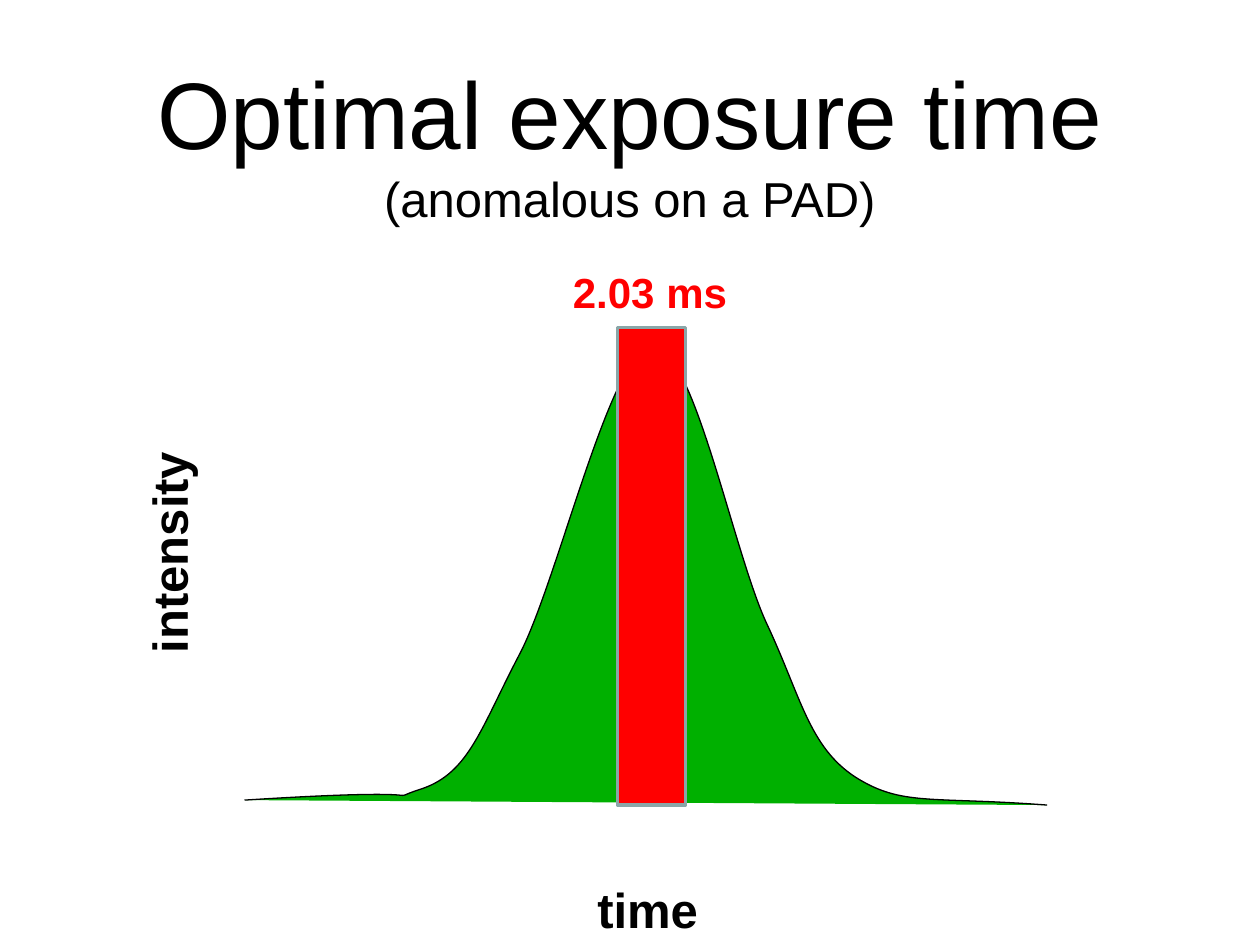
from dataclasses import dataclass

from lxml import etree
from pptx import Presentation
from pptx.dml.color import RGBColor
from pptx.enum.shapes import MSO_SHAPE
from pptx.enum.text import MSO_ANCHOR, MSO_AUTO_SIZE, PP_ALIGN
from pptx.oxml.ns import qn
from pptx.util import Cm, Pt

RECTANGLE = MSO_SHAPE.RECTANGLE
CENTER, LEFT = PP_ALIGN.CENTER, PP_ALIGN.LEFT
MIDDLE = MSO_ANCHOR.MIDDLE
FIT_SHAPE, NO_FIT = MSO_AUTO_SIZE.SHAPE_TO_FIT_TEXT, MSO_AUTO_SIZE.NONE
TITLE_ONLY = 5
FONT = "Arial"
BLACK, RED, GREEN, GREY = "000000", "FF0000", "00B000", "8AA6A8"

# Pulse outline in cm: a start, then two control points and an end per curve
PULSE_START = (4.93, 16.13)
PULSE_CURVES = [
    ((9.35, 15.85), (7.54, 16.21), (8.51, 15.9)),
    ((9.47, 15.57), (9.7, 14.66), (10.49, 13.16)),
    ((11.25, 11.68), (12.32, 7.06), (13.13, 6.98)),
    ((13.97, 6.88), (14.78, 11.15), (15.47, 12.6)),
    ((16.15, 14.05), (16.31, 15.06), (17.25, 15.67)),
    ((18.19, 16.26), (18.75, 16.05), (21.11, 16.23)),
]


@dataclass
class Label:
    text: str
    left: float
    top: float
    width: float
    height: float
    size: float = 28
    color: str = BLACK
    align: PP_ALIGN = CENTER
    rotation: float = 0


AXIS_LABELS = [
    Label("time", 11.77, 17.6, 2.57, 1.45),
    Label("intensity", 1.09, 10.41, 4.62, 1.45, rotation=270),
]
EXPOSURE_LABEL = Label("2.03 ms", 11.3, 5.24, 3.66, 1.27, 24, RED, LEFT)


def rgb(value: str) -> RGBColor:
    return RGBColor.from_string(value)


def style_span(span, size: float, color: str, bold: bool) -> None:
    span.font.name = FONT
    span.font.size = Pt(size)
    span.font.bold = bold
    span.font.color.rgb = rgb(color)


def paint(shape, fill: str, line: str, weight: float) -> None:
    shape.shadow.inherit = False
    shape.fill.solid()
    shape.fill.fore_color.rgb = rgb(fill)
    shape.line.color.rgb = rgb(line)
    shape.line.width = Pt(weight)


def add_label(shapes, label: Label) -> None:
    box = shapes.add_textbox(Cm(label.left), Cm(label.top), Cm(label.width), Cm(label.height))
    box.rotation = label.rotation
    frame = box.text_frame
    frame.word_wrap = False
    frame.auto_size = FIT_SHAPE
    frame.text = label.text
    para = frame.paragraphs[0]
    para.alignment = label.align
    style_span(para.runs[0], label.size, label.color, True)


def add_pulse(shapes) -> None:
    builder = shapes.build_freeform(Cm(PULSE_START[0]), Cm(PULSE_START[1]))
    ends = [(Cm(x), Cm(y)) for _, _, (x, y) in PULSE_CURVES]
    builder.add_line_segments(ends, close=False)
    pulse = builder.convert_to_shape()
    paint(pulse, GREEN, BLACK, 0.75)

    # Bend each straight segment into its Bezier curve
    segments = list(pulse.element.iter(qn("a:lnTo")))
    for segment, curve in zip(segments, PULSE_CURVES):
        bend = etree.Element(qn("a:cubicBezTo"))
        for x, y in curve:
            etree.SubElement(bend, qn("a:pt"), x=str(Cm(x) - pulse.left), y=str(Cm(y) - pulse.top))
        segment.getparent().replace(segment, bend)


def set_title(title) -> None:
    title.left, title.top, title.width, title.height = Cm(1.9), Cm(0.83), Cm(21.59), Cm(4.04)
    frame = title.text_frame
    frame.auto_size = NO_FIT
    frame.vertical_anchor = MIDDLE
    frame.text = "Optimal exposure time\v(anomalous on a PAD)"
    para = frame.paragraphs[0]
    para.alignment = CENTER
    for span, size in zip(para.runs, (54, 28)):
        style_span(span, size, BLACK, False)


def main() -> None:
    deck = Presentation()
    deck.slide_width, deck.slide_height = Cm(25.4), Cm(19.05)
    page = deck.slides.add_slide(deck.slide_layouts[TITLE_ONLY])

    # Axes and pulse
    for label in AXIS_LABELS:
        add_label(page.shapes, label)
    add_pulse(page.shapes)

    # Exposure window with its duration
    exposure = page.shapes.add_group_shape()
    window = exposure.shapes.add_shape(RECTANGLE, Cm(12.45), Cm(6.6), Cm(1.37), Cm(9.63))
    paint(window, RED, GREY, 2)
    add_label(exposure.shapes, EXPOSURE_LABEL)

    # Title, in front of the drawing
    title = page.shapes.title
    set_title(title)
    page.shapes.element.append(title.element)

    deck.save("out.pptx")


if __name__ == "__main__":
    main()
